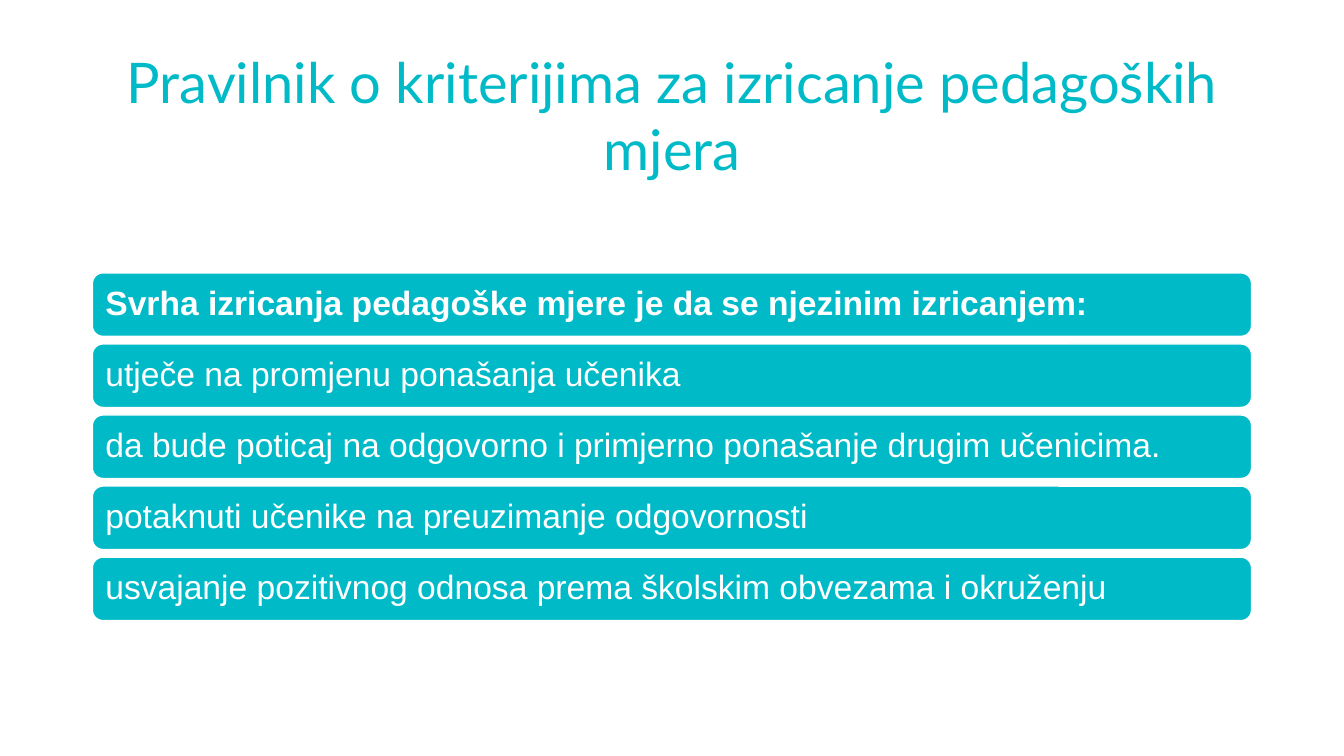
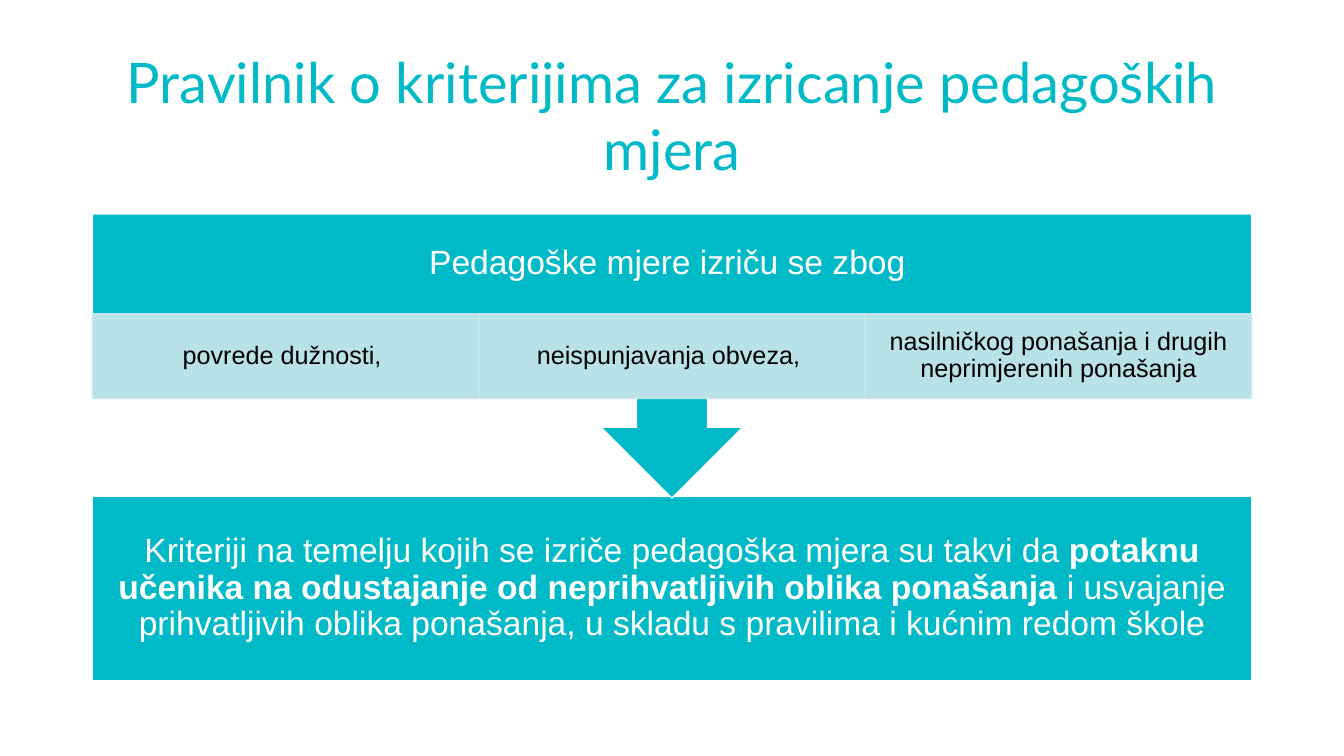
"""Builds two slides on the criteria for pedagogical measures."""
from lxml import etree
from pptx import Presentation, util as u
from pptx.dml.color import RGBColor
from pptx.enum import shapes, text
from pptx.oxml.ns import qn

WIDE, HIGH = 13.333, 7.5
COLS = 12
SPAN = 11.5
EDGE = (WIDE - SPAN) / 2
COL, ROW = SPAN / COLS, HIGH / 100

KIND = shapes.MSO_SHAPE
MID, LEFT = text.PP_ALIGN.CENTER, text.PP_ALIGN.LEFT
THEME = {
    "title": {"ink": "00BAC8", "name": "Lato", "size": 40, "align": MID, "lead": 1.0,
              "anchor": text.MSO_ANCHOR.BOTTOM, "pad": (0.1, 0.05, 0.1, 0.05)},
    "row": {"fill": "00BAC8", "line": "FFFFFF", "ink": "FFFFFF", "name": "Arial", "size": 24,
            "align": LEFT, "pad": (0.1, 0.1, 0.1, 0.1)},
    "panel": {"fill": "00BAC8", "line": "FFFFFF", "ink": "FFFFFF", "name": "Arial", "size": 24,
              "align": MID, "pad": (0.19, 0.19, 0.19, 0.19)},
    "cell": {"fill": "CCE7EB", "line": "CCE7EB", "alpha": 90, "ink": "000000", "name": "Arial",
             "size": 18, "align": MID, "pad": (0.14, 0.03, 0.14, 0.03)},
}
SIDES = ("margin_left", "margin_top", "margin_right", "margin_bottom")


def paint(fill, tone, alpha):
    """Fill with a solid colour, see-through if alpha is under 100."""
    fill.solid()
    fill.fore_color.rgb = RGBColor.from_string(tone)
    if alpha < 100:
        for clr in fill._xPr.iter(qn("a:srgbClr")):
            etree.SubElement(clr, qn("a:alpha")).set("val", str(alpha * 1000))


def place(slide, kind, style, col, row, cols, rows, runs, **extra):
    """Place text, in a shape if a kind is given; runs are (words, bold) pairs."""
    fmt = {**THEME[style], **extra}
    area = [u.Inches(n) for n in (EDGE + col * COL, row * ROW, cols * COL, rows * ROW)]
    if kind is None:
        box = slide.shapes.add_textbox(*area)
    else:
        box = slide.shapes.add_shape(kind, *area)
        box.shadow.inherit = False
        paint(box.fill, fmt["fill"], fmt.get("alpha", 100))
        paint(box.line.fill, fmt["line"], fmt.get("alpha", 100))
        box.line.width = u.Pt(1)
    frame = box.text_frame
    frame.word_wrap = True
    frame.vertical_anchor = fmt.get("anchor", text.MSO_ANCHOR.MIDDLE)
    for side, gap in zip(SIDES, fmt["pad"]):
        setattr(frame, side, u.Inches(gap))
    para = frame.paragraphs[0]
    para.alignment = fmt["align"]
    para.line_spacing = fmt.get("lead", 0.9)
    for words, bold in runs:
        run = para.add_run()
        run.text = words
        for key, val in {"name": fmt["name"], "size": u.Pt(fmt["size"]), "bold": bold}.items():
            setattr(run.font, key, val)
        run.font.color.rgb = RGBColor.from_string(fmt["ink"])


deck = Presentation()
deck.slide_width, deck.slide_height = u.Inches(WIDE), u.Inches(HIGH)
goals, cause = [deck.slides.add_slide(deck.slide_layouts[6]) for _ in range(2)]
for slide in (goals, cause):
    place(slide, None, "title", 0, 5.3, COLS, 19.4,
          [("Pravilnik o kriterijima za izricanje pedagoških mjera", False)])

ITEMS = [
    "Svrha izricanja pedagoške mjere je da se njezinim izricanjem:",
    "utječe na promjenu ponašanja učenika",
    "da bude poticaj na odgovorno i primjerno ponašanje drugim učenicima.",
    "potaknuti učenike na preuzimanje odgovornosti",
    "usvajanje pozitivnog odnosa prema školskim obvezama i okruženju",
]
for i, item in enumerate(ITEMS):
    place(goals, KIND.ROUNDED_RECTANGLE, "row", 0, 36.1 + i * 9.4, COLS, 8.4, [(item, i == 0)])

place(cause, KIND.RECTANGLE, "panel", 0, 65.6, COLS, 24.4, [
    ("Kriteriji na temelju kojih se izriče pedagoška mjera su takvi da ", False),
    ("potaknu učenika na odustajanje od neprihvatljivih oblika ponašanja ", True),
    ("i usvajanje prihvatljivih oblika ponašanja, u skladu s pravilima i kućnim redom škole",
     False),
])
place(cause, KIND.DOWN_ARROW_CALLOUT, "panel", 0, 28.3, COLS, 37.6,
      [("Pedagoške mjere izriču se zbog ", False)], pad=(0.19, 0.19, 0.19, 1.03))

CAUSES = ["povrede dužnosti, ", "neispunjavanja obveza, ",
          "nasilničkog ponašanja i drugih neprimjerenih ponašanja"]
part = COLS / len(CAUSES)
for i, item in enumerate(CAUSES):
    place(cause, KIND.RECTANGLE, "cell", i * part, 41.5, part, 11.2, [(item, False)])

deck.save("out.pptx")
